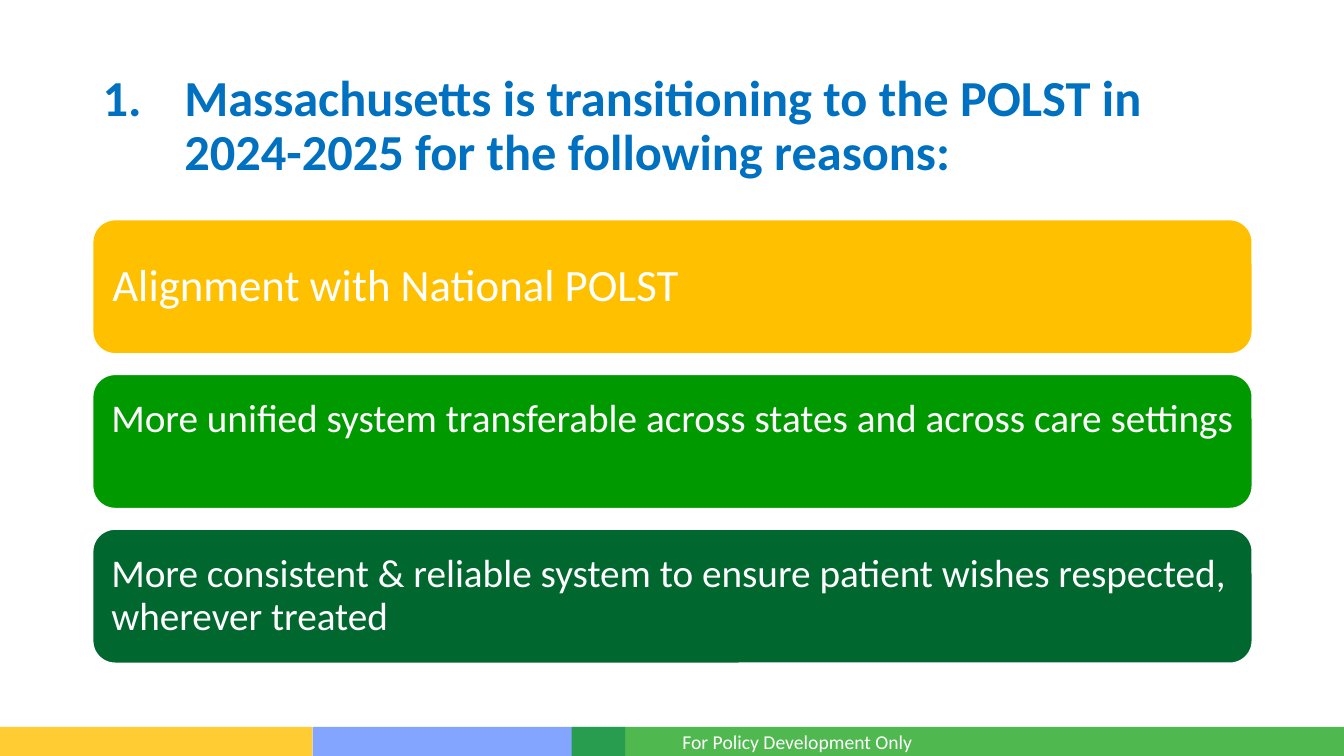
import dataclasses

import pptx
import pptx.dml.color
import pptx.enum.shapes
import pptx.enum.text
import pptx.oxml
import pptx.oxml.ns
import pptx.util

Inches = pptx.util.Inches
Pt = pptx.util.Pt
Shapes = pptx.enum.shapes.MSO_SHAPE
Anchor = pptx.enum.text.MSO_ANCHOR


@dataclasses.dataclass(frozen=True)
class Theme:
    font: str = "Calibri"
    white: str = "FFFFFF"
    title: str = "0070C0"
    gold: str = "FFC000"
    green: str = "009900"
    forest: str = "00682F"
    periwinkle: str = "5E8BFF"
    title_size: int = 36
    lead_size: int = 32
    reason_size: int = 28
    footer_size: int = 14


THEME = Theme()

BAND_TOP, BAND_HEIGHT = 7.21, 0.29
BANDS = [
    (3.1, 3.1, THEME.periwinkle, 77),
    (0, 3.1, THEME.gold, 80),
    (5.67, 7.67, THEME.green, 69),
]

REASON_LEFT, REASON_WIDTH, REASON_HEIGHT = 0.92, 11.5, 1.33
FIRST_TOP, LAST_TOP = 2.18, 5.25
REASONS = [
    ("Alignment with National POLST", THEME.gold, THEME.lead_size, 0.13, 0.13),
    ("More unified system transferable across states and across care settings",
     THEME.green, THEME.reason_size, 0.12, 0.55),
    ("More consistent & reliable system to ensure patient wishes respected, wherever treated",
     THEME.forest, THEME.reason_size, 0.12, 0.12),
]


def rgb(color):
    return pptx.dml.color.RGBColor.from_string(color)


def add_filled_shape(slide, kind, left, top, width, height, color):
    shape = slide.shapes.add_shape(
        kind, Inches(left), Inches(top), Inches(width), Inches(height))
    shape.shadow.inherit = False
    shape.fill.solid()
    shape.fill.fore_color.rgb = rgb(color)
    shape.line.fill.background()
    return shape


def add_band(slide, left, width, color, opacity):
    band = add_filled_shape(
        slide, Shapes.RECTANGLE, left, BAND_TOP, width, BAND_HEIGHT, color)
    color_element = band.fill._xPr.find(".//" + pptx.oxml.ns.qn("a:srgbClr"))
    alpha = pptx.oxml.parse_xml(
        f'<a:alpha {pptx.oxml.ns.nsdecls("a")} val="{opacity * 1000}"/>')
    color_element.append(alpha)


def write_text(shape, text, size, color, bold=False, anchor=Anchor.MIDDLE, spacing=0.9):
    frame = shape.text_frame
    frame.word_wrap = True
    frame.vertical_anchor = anchor
    paragraph = frame.paragraphs[0]
    paragraph.alignment = pptx.enum.text.PP_ALIGN.LEFT
    paragraph.line_spacing = spacing
    run = paragraph.add_run()
    run.text = text
    run.font.name = THEME.font
    run.font.size = Pt(size)
    run.font.bold = bold
    run.font.color.rgb = rgb(color)
    return paragraph


def add_text(slide, left, top, width, height, text, size, color, **style):
    box = slide.shapes.add_textbox(
        Inches(left), Inches(top), Inches(width), Inches(height))
    return write_text(box, text, size, color, **style)


def number_paragraph(paragraph, indent):
    properties = paragraph._p.get_or_add_pPr()
    properties.set("marL", str(Inches(indent)))
    properties.set("indent", str(-Inches(indent)))
    properties.append(pptx.oxml.parse_xml(
        f'<a:buFont {pptx.oxml.ns.nsdecls("a")} typeface="+mj-lt"/>'))
    properties.append(pptx.oxml.parse_xml(
        f'<a:buAutoNum {pptx.oxml.ns.nsdecls("a")} type="arabicPeriod"/>'))


def add_reason(slide, top, text, color, size, inset, bottom_inset):
    card = add_filled_shape(
        slide, Shapes.ROUNDED_RECTANGLE, REASON_LEFT, top,
        REASON_WIDTH, REASON_HEIGHT, color)
    card.line.color.rgb = rgb(THEME.white)
    card.line.width = Pt(1)
    frame = card.text_frame
    frame.margin_left = frame.margin_top = Inches(inset)
    frame.margin_right = Inches(0.05)
    frame.margin_bottom = Inches(bottom_inset)
    write_text(card, text, size, THEME.white)


def main():
    presentation = pptx.Presentation()
    presentation.slide_width = Inches(13.33)
    presentation.slide_height = Inches(7.5)
    slide = presentation.slides.add_slide(presentation.slide_layouts[6])

    for band in BANDS:
        add_band(slide, *band)
    add_text(slide, 6.67, 7.19, 6.67, 0.34, "For Policy Development Only",
             THEME.footer_size, THEME.white, anchor=Anchor.TOP, spacing=1.0)

    title = add_text(
        slide, 0.92, 0.64, 11.5, 1.24,
        "Massachusetts is transitioning to the POLST in 2024-2025 for the following reasons:",
        THEME.title_size, THEME.title, bold=True)
    number_paragraph(title, 0.81)

    pitch = (LAST_TOP - FIRST_TOP) / (len(REASONS) - 1)
    for index, reason in enumerate(REASONS):
        add_reason(slide, FIRST_TOP + index * pitch, *reason)

    presentation.save("out.pptx")


if __name__ == "__main__":
    main()
